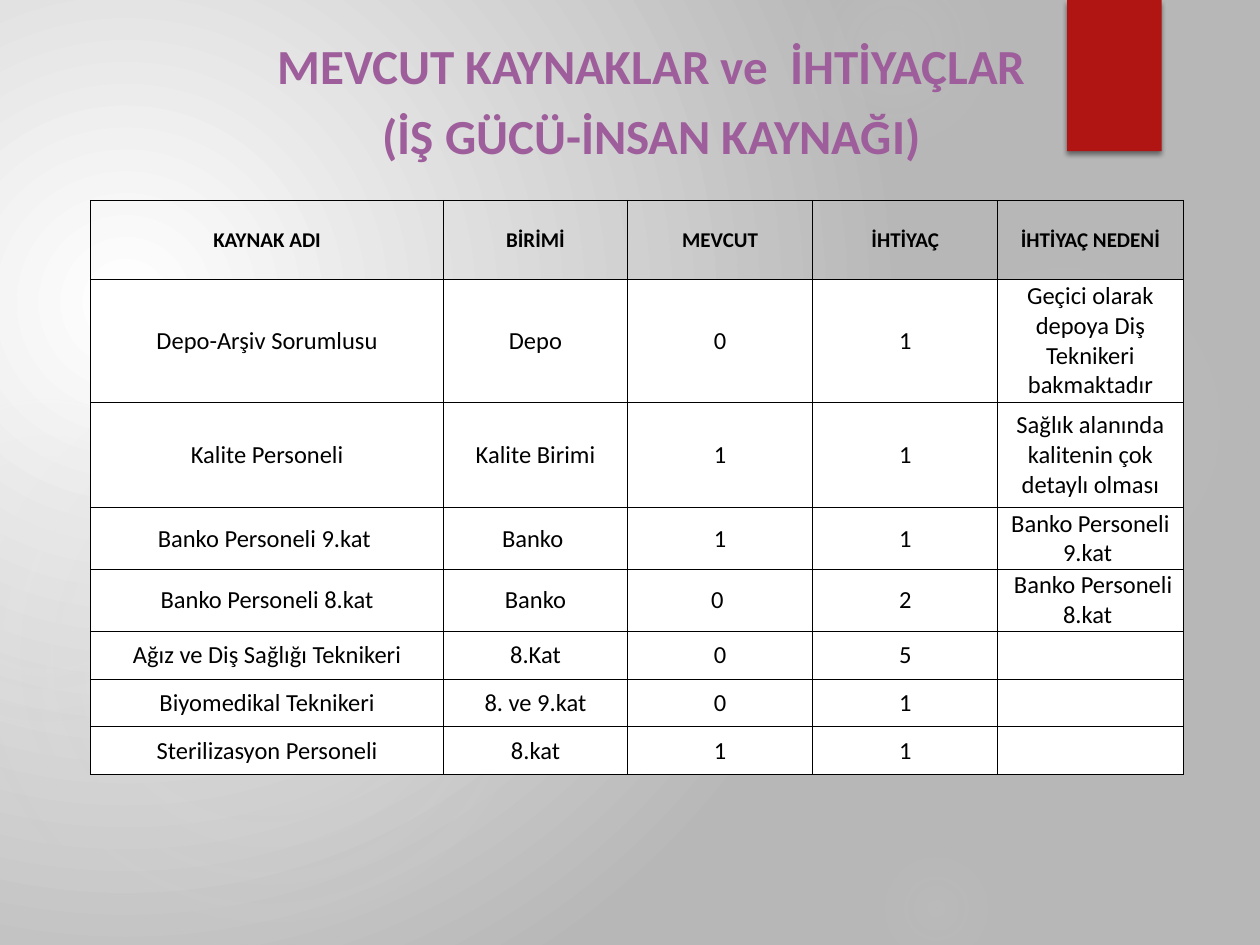
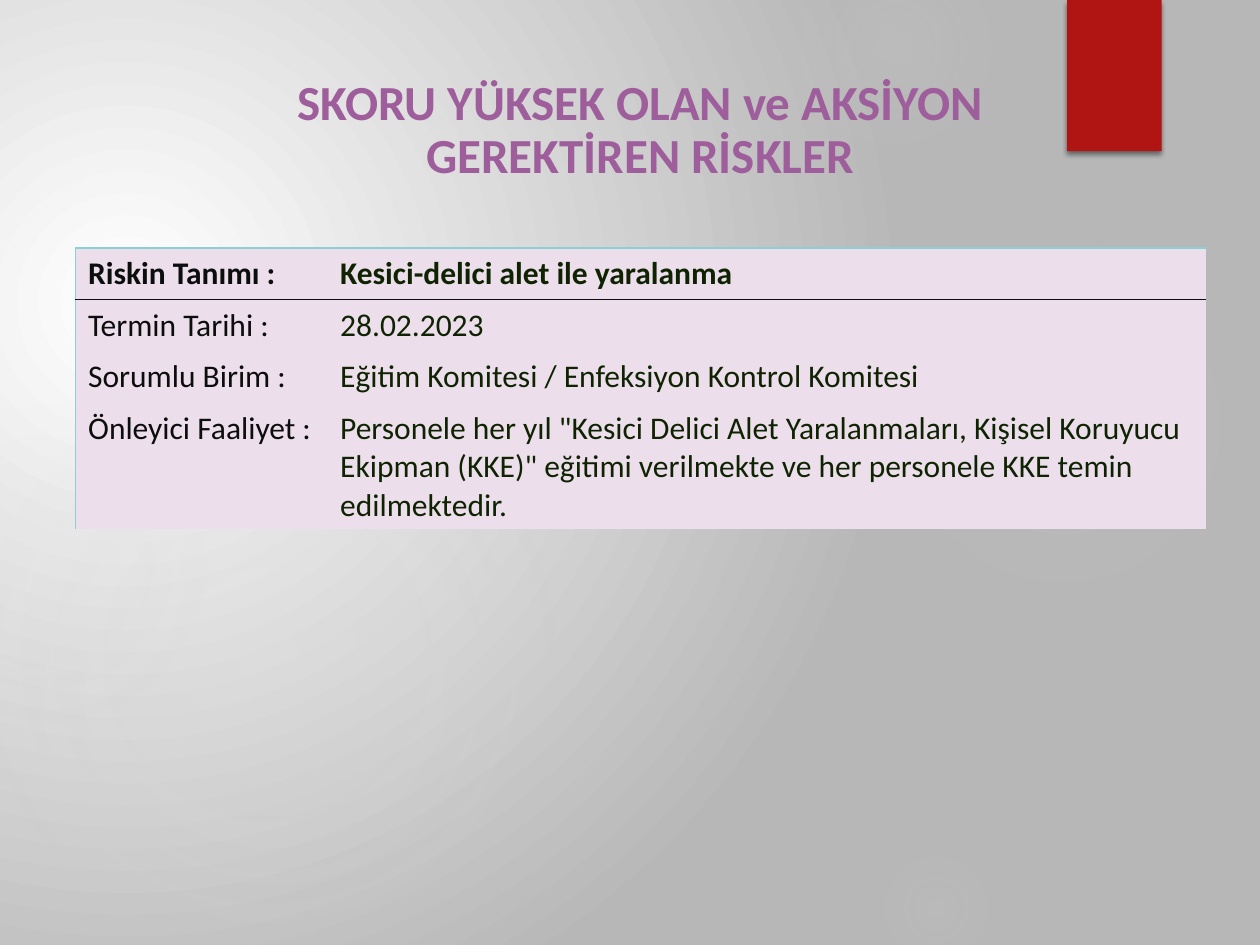
from lxml import etree
from pptx import Presentation
from pptx.dml.color import RGBColor
from pptx.enum import shapes, text
from pptx.oxml import ns, parse_xml
from pptx.util import Inches, Pt

BLACK, WHITE, RED = "000000", "FFFFFF", "B01513"
GRAY, GLOW, PLUM = "B7B7B7", "D9D9D9", "9E5E9B"
PINK, TEAL, INK, MOSS = "ECDFEB", "8AD0D5", "0C0D0D", "0F2303"
FONT = "Calibri"
PLAIN = "{2D5ABB26-0587-4C30-8999-92F81FD0307C}"
MID = (50, 50, 50, 50)


def hue(code):
    return RGBColor.from_string(code)


def put(para, words, size, tone, bold=False):
    run = para.add_run()
    run.text = words
    run.font.name = FONT
    run.font.size = Pt(size)
    run.font.bold = bold
    run.font.color.rgb = hue(tone)


GLOWS = [
    (6.89, 1.83, 3.08, [(0, 7), (36, 6), (69, 0)]),
    (6.22, -0.5, 1.75, [(0, 14), (36, 7), (73, 0)]),
    (6.89, 6.67, 1.08, [(0, 9), (36, 5), (66, 0)]),
    (-0.17, 2.92, 4.58, [(0, 11), (36, 10), (75, 0)]),
    (-0.92, 3.17, 2.58, [(0, 8), (36, 8), (72, 0)]),
]

STAFF = [
    ["KAYNAK ADI", "BİRİMİ", "MEVCUT", "İHTİYAÇ", "İHTİYAÇ NEDENİ"],
    ["Depo-Arşiv Sorumlusu", "Depo", "0", "1",
     "Geçici olarak depoya Diş Teknikeri bakmaktadır"],
    ["Kalite Personeli", "Kalite Birimi", "1", "1",
     "Sağlık alanında kalitenin çok detaylı olması"],
    ["Banko Personeli 9.kat ", "Banko ", "1", "1", "Banko Personeli 9.kat "],
    [" Banko Personeli 8.kat ", "Banko", "0 ", "2", " Banko Personeli 8.kat "],
    ["Ağız ve Diş Sağlığı Teknikeri", "8.Kat", "0", "5", ""],
    ["Biyomedikal Teknikeri", "8. ve 9.kat", "0", "1", ""],
    ["Sterilizasyon Personeli", "8.kat", "1", "1", ""],
]

RISK = [
    ["Riskin Tanımı :", "Kesici-delici alet ile yaralanma"],
    ["Termin Tarihi :", "28.02.2023"],
    ["Sorumlu Birim :", "Eğitim Komitesi / Enfeksiyon Kontrol Komitesi"],
    ["Önleyici Faaliyet :",
     'Personele her yıl "Kesici Delici Alet Yaralanmaları, Kişisel Koruyucu '
     'Ekipman (KKE)" eğitimi verilmekte ve her personele KKE temin edilmektedir.'],
]

PAGES = [
    dict(title=["MEVCUT KAYNAKLAR ve  İHTİYAÇLAR", "(İŞ GÜCÜ-İNSAN KAYNAĞI)"],
         box=(1.96, 0.17, 6.42, 1.18), gap=1.0, data=STAFF, at=(0.72, 1.59),
         cols=[2.8, 1.46] + [1.47] * 3,
         rows=[0.63, 0.97, 0.84] + [0.49] * 2 + [0.38] * 3, grid=True),
    dict(title=["SKORU YÜKSEK OLAN ve AKSİYON GEREKTİREN RİSKLER"],
         box=(2.2, 0.58, 5.76, 0.93), gap=0.9, data=RISK, at=(0.6, 1.97),
         cols=[2, 6.97], rows=[0.41] * 4, grid=False),
]

deck = Presentation()
deck.slide_width, deck.slide_height = Inches(10), Inches(7.5)

for page in PAGES:
    slide = deck.slides.add_slide(deck.slide_layouts[6])
    slide.background.fill.solid()
    back = slide.element.xpath(".//p:bgPr")[0]
    fades = [(back, [(0, WHITE, 100), (100, GRAY, 100)], (45, 65, 125, 100))]

    for x, y, size, stops in GLOWS:
        glow = slide.shapes.add_shape(shapes.MSO_SHAPE.OVAL, Inches(x), Inches(y),
                                      Inches(size), Inches(size))
        glow.shadow.inherit = False
        glow.fill.solid()
        glow.line.fill.background()
        fades.append((glow.element.spPr, [(p, GLOW, a) for p, a in stops], MID))

    for props, stops, (l, t, r, b) in fades:
        marks = "".join(
            f'<a:gs pos="{p * 1000}"><a:srgbClr val="{c}"><a:alpha val="{a * 1000}"/>'
            f'</a:srgbClr></a:gs>' for p, c, a in stops)
        old = props.find(ns.qn("a:solidFill"))
        props.replace(old, parse_xml(
            f'<a:gradFill {ns.nsdecls("a")} rotWithShape="1"><a:gsLst>{marks}</a:gsLst>'
            f'<a:path path="circle"><a:fillToRect l="{l * 1000}" t="{t * 1000}" '
            f'r="{r * 1000}" b="{b * 1000}"/></a:path></a:gradFill>'))

    flag = slide.shapes.add_shape(shapes.MSO_SHAPE.RECTANGLE, Inches(8.47), 0,
                                  Inches(0.75), Inches(1.2))
    flag.shadow.inherit = False
    flag.fill.solid()
    flag.fill.fore_color.rgb = hue(RED)
    flag.line.fill.background()
    shade = etree.SubElement(flag.element.spPr.find(ns.qn("a:effectLst")),
                             ns.qn("a:outerShdw"), blurRad=str(Pt(3)),
                             dist=str(Pt(2)), dir="5400000", rotWithShape="0")
    tint = etree.SubElement(shade, ns.qn("a:srgbClr"), val=BLACK)
    etree.SubElement(tint, ns.qn("a:alpha"), val="45000")

    frame = slide.shapes.add_textbox(*map(Inches, page["box"])).text_frame
    frame.word_wrap = True
    frame.vertical_anchor = text.MSO_ANCHOR.BOTTOM
    for i, line in enumerate(page["title"]):
        para = frame.add_paragraph() if i else frame.paragraphs[0]
        para.alignment = text.PP_ALIGN.CENTER
        para.line_spacing = page["gap"]
        para.space_after = Pt(6)
        put(para, line, 28, PLUM, True)

    data, cols, rows, grid = (page[k] for k in ("data", "cols", "rows", "grid"))
    x, y = page["at"]
    holder = slide.shapes.add_table(len(rows), len(cols), Inches(x), Inches(y),
                                    Inches(sum(cols)), Inches(sum(rows)))
    table = holder.table
    table.horz_banding = False
    holder.element.xpath(".//a:tableStyleId")[0].text = PLAIN
    for col, wide in zip(table.columns, cols):
        col.width = Inches(wide)
    for row, high in zip(table.rows, rows):
        row.height = Inches(high)

    for i, line in enumerate(data):
        for j, words in enumerate(line):
            cell = table.cell(i, j)
            para = cell.text_frame.paragraphs[0]
            if grid:
                cell.margin_left = cell.margin_right = 0
                cell.margin_top = cell.margin_bottom = 0
                cell.vertical_anchor = text.MSO_ANCHOR.MIDDLE
                para.alignment = text.PP_ALIGN.CENTER
                size, tone, fill = (14, BLACK, WHITE) if i else (12, BLACK, None)
                edges = {side: (BLACK, 0.5) for side in "LRTB"}
            else:
                size, tone, fill = 18, MOSS if j else INK, PINK
                edges = {}
                if j == 0:
                    edges["L"] = (TEAL, 1)
                if i == 0:
                    edges.update(T=(TEAL, 1), B=(INK, 0.5))
                if i == 1:
                    edges["T"] = (INK, 0.5)
            if words:
                put(para, words, size, tone, i == 0)
            if fill:
                cell.fill.solid()
                cell.fill.fore_color.rgb = hue(fill)
            else:
                cell.fill.background()
            props = cell._tc.get_or_add_tcPr()
            for k, side in enumerate("LRTB"):
                tone, wide = edges.get(side, (None, 0))
                paint = (f'<a:solidFill><a:srgbClr val="{tone}"/></a:solidFill>'
                         if tone else "<a:noFill/>")
                props.insert(k, parse_xml(
                    f'<a:ln{side} {ns.nsdecls("a")} w="{Pt(wide)}">{paint}</a:ln{side}>'))

deck.save("out.pptx")
